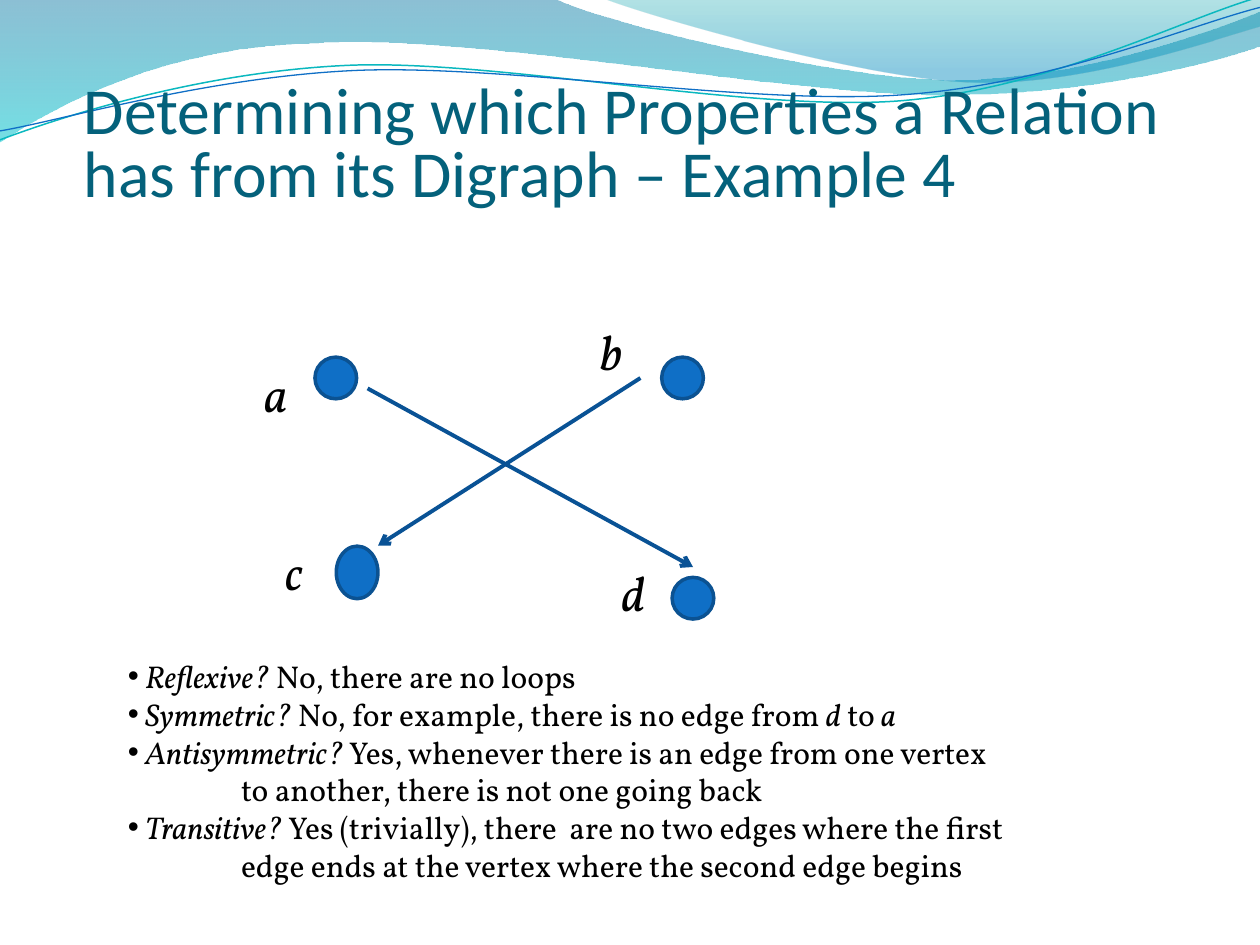
from dataclasses import dataclass

from pptx import Presentation
from pptx.dml.color import RGBColor
from pptx.enum.shapes import MSO_CONNECTOR, MSO_SHAPE
from pptx.enum.text import MSO_ANCHOR, MSO_AUTO_SIZE
from pptx.oxml.ns import qn
from pptx.oxml.xmlchemy import OxmlElement
from pptx.util import Cm, Pt


@dataclass(frozen=True)
class Theme:
    title: str = "04617B"
    ink: str = "000000"
    vertex: str = "0F6FC6"
    vertex_edge: str = "0B5292"
    arrow: str = "095295"
    teal: str = "0AB8BF"
    band: tuple = ((0, "0074A1", 45), (1, "00C6CF", 55))
    corner: tuple = ((0, "00A1A9", 30), (0.8, "008BBF", 45))
    heading_font: str = "Calibri"
    body_font: str = "Vollkorn"
    title_size: float = 37.5
    label_size: float = 28
    body_size: float = 18


def rgb(code):
    return RGBColor.from_string(code)


def add_child(parent, tag, **attributes):
    child = OxmlElement(tag)
    for name, value in attributes.items():
        child.set(name, str(value))
    parent.append(child)


def write(paragraph, text, font, size, color, italic=False):
    run = paragraph.add_run()
    run.text = text
    run.font.name = font
    run.font.size = Pt(size)
    run.font.italic = italic
    run.font.color.rgb = rgb(color)


def bend(wave, segments):
    strokes = iter(list(wave._element.iter(qn("a:lnTo"))))
    for segment in segments:
        group = [next(strokes) for _ in segment]
        if len(group) == 3:
            curve = OxmlElement("a:cubicBezTo")
            group[0].addprevious(curve)
            for stroke in group:
                curve.append(stroke[0])
                stroke.getparent().remove(stroke)


class DigraphSlide:
    def __init__(self, slide, theme):
        self.shapes = slide.shapes
        self.theme = theme

    def outline(self, start, segments, close):
        builder = self.shapes.build_freeform(*map(Cm, start))
        points = [(Cm(x), Cm(y)) for segment in segments for x, y in segment]
        builder.add_line_segments(points, close=close)
        wave = builder.convert_to_shape()
        bend(wave, segments)
        wave.shadow.inherit = False
        return wave

    def band(self, start, segments, stops):
        wave = self.outline(start, segments, True)
        wave.line.fill.background()
        wave.fill.gradient()
        wave.fill.gradient_angle = 270
        for stop, (position, color, _) in zip(wave.fill.gradient_stops, stops):
            stop.position = position
            stop.color.rgb = rgb(color)
        tints = wave._element.spPr.iter(qn("a:srgbClr"))
        for tint, (_, _, opacity) in zip(tints, stops):
            add_child(tint, "a:alpha", val=opacity * 1000)

    def strand(self, start, segments, color, width):
        wave = self.outline(start, segments, False)
        wave.rotation = 357.3
        wave.fill.background()
        wave.line.color.rgb = rgb(color)
        wave.line.width = Pt(width)

    def vertex(self, left, top, height=0.84):
        dot = self.shapes.add_shape(
            MSO_SHAPE.OVAL, Cm(left), Cm(top), Cm(0.84), Cm(height))
        dot.shadow.inherit = False
        dot.fill.solid()
        dot.fill.fore_color.rgb = rgb(self.theme.vertex)
        dot.line.color.rgb = rgb(self.theme.vertex_edge)
        dot.line.width = Pt(2)

    def arrow(self, start, end):
        edge = self.shapes.add_connector(
            MSO_CONNECTOR.STRAIGHT, *map(Cm, start + end))
        edge.line.color.rgb = rgb(self.theme.arrow)
        edge.line.width = Pt(2.25)
        add_child(edge.line._get_or_add_ln(), "a:tailEnd", type="arrow")
        add_child(edge._element.spPr, "a:effectLst")

    def frame(self, left, top, width, height):
        box = self.shapes.add_textbox(*map(Cm, (left, top, width, height)))
        box.text_frame.word_wrap = True
        return box.text_frame

    def label(self, name, left, top):
        frame = self.frame(left, top, 1.06, 1.45)
        frame.auto_size = MSO_AUTO_SIZE.SHAPE_TO_FIT_TEXT
        write(frame.paragraphs[0], name, self.theme.body_font,
              self.theme.label_size, self.theme.ink, italic=True)

    def title(self, text):
        frame = self.frame(1.69, 1.06, 22.86, 3.18)
        frame.vertical_anchor = MSO_ANCHOR.BOTTOM
        frame.margin_left = frame.margin_right = frame.margin_bottom = 0
        heading = frame.paragraphs[0]
        heading.line_spacing = 0.8
        write(heading, text, self.theme.heading_font,
              self.theme.title_size, self.theme.title)

    def findings(self, lines):
        frame = self.frame(2.33, 13.12, 20.75, 4.88)
        frame.auto_size = MSO_AUTO_SIZE.SHAPE_TO_FIT_TEXT
        for index, runs in enumerate(lines):
            line = frame.add_paragraph() if index else frame.paragraphs[0]
            settings = line._p.get_or_add_pPr()
            if len(runs) > 1:
                add_child(settings, "a:buFont", typeface="Arial")
                add_child(settings, "a:buChar", char="•")
            else:
                settings.set("marL", str(Cm(2.28)))
            for position, text in enumerate(runs):
                write(line, text, self.theme.body_font, self.theme.body_size,
                      self.theme.ink, italic=position % 2 == 1)


BAND = [
    ((11.18, -0.03),),
    ((12.09, 0.43), (16.87, 1.6), (19.25, 1.6)),
    ((21.67, 1.6), (24.33, 0.66), (25.4, 0.23)),
    ((25.43, 0.91),),
    ((24.97, 1.12), (22.1, 1.93), (18.95, 1.91)),
    ((15.8, 1.91), (9.7, 0.71), (6.53, 0.86)),
    ((3.28, 0.91), (1.17, 2.11), (-0.03, 2.87)),
    ((0, 0),),
]
CORNER = [
    ((12.93, 0.28), (17.32, 1.57), (19.53, 1.65)),
    ((21.74, 1.75), (24.41, 0.81), (25.4, 0.53)),
    ((25.4, 0),),
    ((12.17, -0.03),),
]
TEAL_STRAND = [
    ((1.19, 1.82), (4.02, 1.04), (7.05, 1.05)),
    ((10.05, 1.07), (15.02, 2.37), (18.08, 2.29)),
    ((21.13, 2.2), (23.87, 0.91), (25.41, 0.55)),
]
BLUE_STRAND = [
    ((1.16, 1.9), (4.18, 1.15), (7.2, 1.16)),
    ((10.25, 1.18), (15.13, 2.25), (18.18, 2.17)),
    ((21.21, 2.1), (23.93, 1.06), (25.45, 0.75)),
]
FINDINGS = [
    (" ", "Reflexive?", " No, there are no loops"),
    (" ", "Symmetric?", " No, for example, there is no edge from ", "d", " to ", "a"),
    (" ", "Antisymmetric?", " Yes, whenever there is an edge from one vertex"),
    ("to another, there is not one going back",),
    (" ", "Transitive? ", "Yes (trivially), there  are no two edges where the first"),
    ("edge ends at the vertex where the second edge begins",),
]


def main():
    deck = Presentation()
    deck.slide_width, deck.slide_height = Cm(25.4), Cm(19.05)
    theme = Theme()
    page = DigraphSlide(deck.slides.add_slide(deck.slide_layouts[6]), theme)
    page.band((0, 0), BAND, theme.band)
    page.band((12.17, -0.03), CORNER, theme.corner)
    page.strand((-0.05, 2.22), TEAL_STRAND, theme.teal, 0.85)
    page.strand((-0.04, 2.04), BLUE_STRAND, theme.vertex, 0.75)
    for place in ((6.35, 7.2), (13.34, 7.2), (6.78, 11.01, 1.06), (13.55, 11.64)):
        page.vertex(*place)
    page.findings(FINDINGS)
    page.arrow((7.41, 7.83), (13.97, 11.43))
    page.arrow((12.91, 7.62), (7.62, 11))
    for name, left, top in (("a", 5.08, 7.2), ("d", 12.28, 11.22),
                            ("c", 5.5, 10.8), ("b", 11.85, 6.35)):
        page.label(name, left, top)
    page.title("Determining which Properties a Relation has from its Digraph – Example 4")
    deck.save("out.pptx")


if __name__ == "__main__":
    main()
